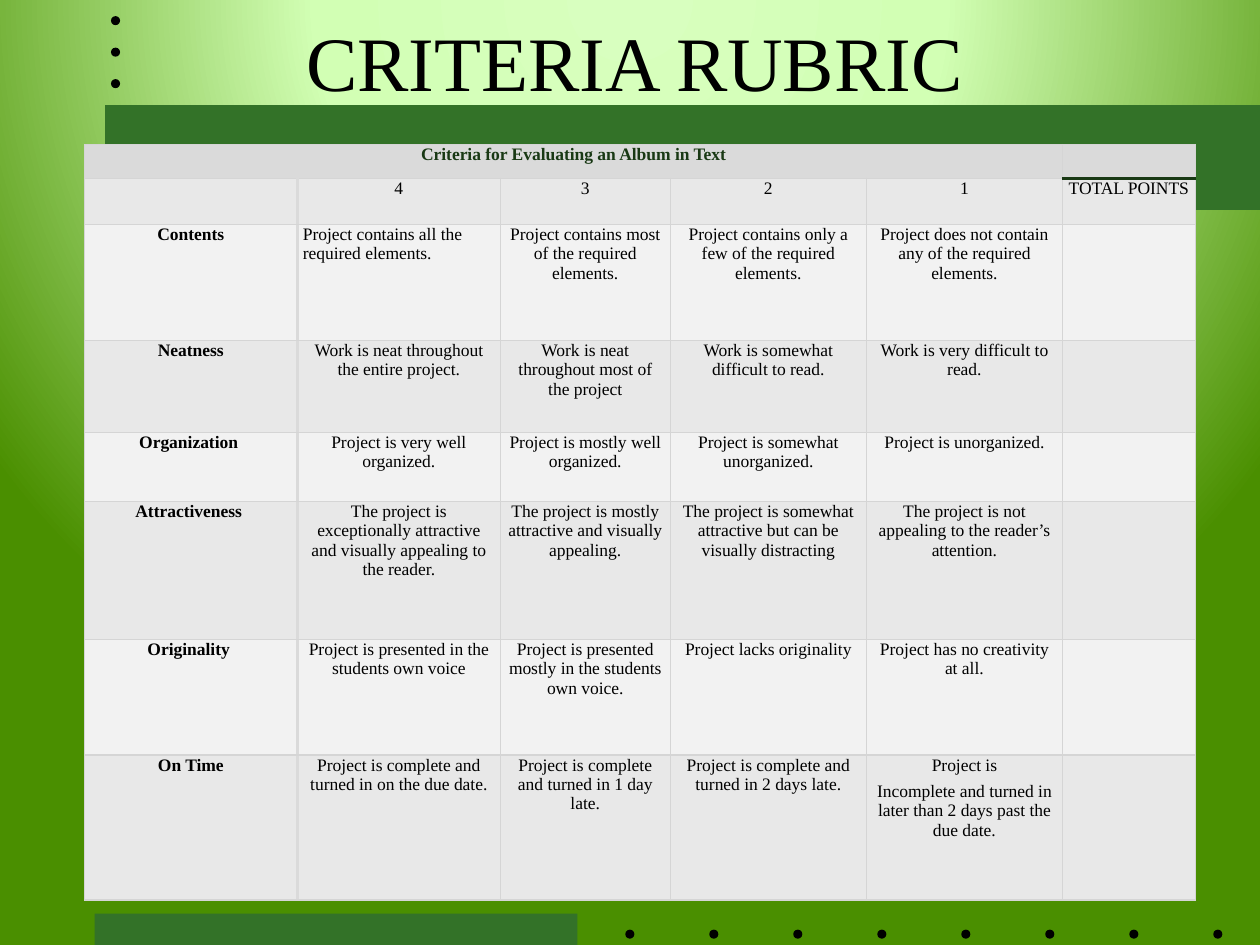
from lxml import etree
from pptx import Presentation
from pptx.dml.color import RGBColor
from pptx.enum.shapes import MSO_SHAPE
from pptx.enum.text import MSO_ANCHOR, MSO_AUTO_SIZE, PP_ALIGN
from pptx.oxml import parse_xml
from pptx.oxml.ns import nsdecls, qn
from pptx.util import Pt

RECT, DOT = MSO_SHAPE.RECTANGLE, MSO_SHAPE.OVAL
LEFT, MID = PP_ALIGN.LEFT, PP_ALIGN.CENTER
FONT = "Times New Roman"
COLORS = {
    "pale": "D8FFBF", "mint": "D2FFB4", "leaf": "4A8F00", "bar": "337228",
    "ink": "000000", "dark": "193914", "edge": "D5D5D5", "rule": "DADADA",
    "head": "DADADA", "odd": "E8E8E8", "even": "F2F2F2",
}
STOPS = [(0, "pale"), (40, "mint"), (100, "leaf")]
COLS = [121.7, 116, 97.1, 112.1, 112.1, 75.8]
ROWS = [19.5, 26.3, 66.2, 52.6, 39.5, 78.8, 66.2, 82.8]
CELLS = [
    ["Criteria for Evaluating an Album in Text", "", "", "", "", ""],
    ["", "4", "3", "2", "1", "TOTAL POINTS"],
    ["Contents",
     "Project contains all the required elements.",
     "Project contains most of the required elements.",
     "Project contains only a few of the required elements.",
     "Project does not contain any of the required elements.", ""],
    ["Neatness",
     "Work is neat throughout the entire project.",
     "Work is neat throughout most of the project",
     "Work is somewhat difficult to read.",
     "Work is very difficult to read.", ""],
    ["Organization ",
     "Project is very well organized.",
     "Project is mostly well organized.",
     "Project is somewhat unorganized.",
     "Project is unorganized.", ""],
    ["Attractiveness ",
     "The project is exceptionally attractive and visually appealing to the reader.",
     "The project is mostly attractive and visually appealing.",
     "The project is somewhat attractive but can be visually distracting",
     "The project is not appealing to the reader’s attention.", ""],
    ["Originality ",
     "Project is presented in the students own voice",
     "Project is presented mostly in the students own voice.",
     "Project lacks originality",
     "Project has no creativity at all.", ""],
    ["On Time",
     "Project is complete and turned in on the due date.",
     "Project is complete and turned in 1 day late.",
     "Project is complete and turned in 2 days late.",
     "Project is\nIncomplete and turned in later than 2 days past the due date.", ""],
]


def color(name):
    return RGBColor.from_string(COLORS[name])


def set_back(slide):
    slide.background.fill.gradient()
    old = slide.element.find(".//" + qn("a:gradFill"))
    stops = "".join(
        f'<a:gs pos="{pos * 1000}"><a:srgbClr val="{COLORS[name]}"/></a:gs>'
        for pos, name in STOPS)
    new = parse_xml(
        f'<a:gradFill {nsdecls("a")} rotWithShape="1"><a:gsLst>{stops}</a:gsLst>'
        '<a:path path="circle"><a:fillToRect l="50000" t="-80000" r="50000" '
        'b="180000"/></a:path></a:gradFill>')
    old.getparent().replace(old, new)


def add_shape(slide, kind, name, x, y, w, h):
    shape = slide.shapes.add_shape(kind, Pt(x), Pt(y), Pt(w), Pt(h))
    shape.shadow.inherit = False
    shape.fill.solid()
    shape.fill.fore_color.rgb = color(name)
    shape.line.fill.background()


def style(para, size, name="ink", bold=False, align=MID):
    para.alignment = align
    for run in para.runs:
        font = run.font
        font.name, font.size, font.bold = FONT, Pt(size), bold
        font.color.rgb = color(name)


def set_title(slide):
    title = slide.shapes.title
    title.left, title.top = Pt(93.6), Pt(15.1)
    title.width, title.height = Pt(538.6), Pt(39.6)
    frame = title.text_frame
    frame.text = "CRITERIA RUBRIC"
    frame.word_wrap = True
    frame.auto_size = MSO_AUTO_SIZE.NONE
    frame.vertical_anchor = MSO_ANCHOR.MIDDLE
    style(frame.paragraphs[0], 44)


def set_edge(cell, side, name="edge", width=0.75):
    line = etree.SubElement(
        cell._tc.get_or_add_tcPr(), qn(f"a:ln{side}"), w=str(Pt(width)))
    fill = etree.SubElement(line, qn("a:solidFill"))
    etree.SubElement(fill, qn("a:srgbClr"), val=COLORS[name])


def set_cell(cell, row, col, text):
    special = {}
    if row and col < 2:
        special["R" if col == 0 else "L"] = ("rule", 2)
    if row < 2 and col == len(COLS) - 1:
        special["B" if row == 0 else "T"] = ("dark", 2)
    for side in "LRTB":
        set_edge(cell, side, *special.get(side, ()))
    cell.fill.solid()
    cell.fill.fore_color.rgb = color(
        "head" if row == 0 else "odd" if row % 2 else "even")
    cell.margin_left = cell.margin_right = Pt(3.2)
    cell.margin_top, cell.margin_bottom = Pt(0.4), 0
    cell.text_frame.text = text
    for para in cell.text_frame.paragraphs:
        para.space_after = Pt(4)
        style(para, 10, "ink" if row else "dark", col == 0,
              LEFT if (row, col) == (2, 1) else MID)
        if not text:
            etree.SubElement(para._p, qn("a:endParaRPr"), sz="1000")


def add_grid(slide):
    table = slide.shapes.add_table(
        len(ROWS), len(COLS), Pt(48.2), Pt(82.5),
        Pt(sum(COLS)), Pt(sum(ROWS))).table
    table.first_row = table.horz_banding = False
    for col, width in zip(table.columns, COLS):
        col.width = Pt(width)
    for row, height in zip(table.rows, ROWS):
        row.height = Pt(height)
    for r, texts in enumerate(CELLS):
        for c, text in enumerate(texts):
            set_cell(table.cell(r, c), r, c, text)
    table.cell(0, 0).merge(table.cell(0, 4))


def main():
    deck = Presentation()
    deck.slide_width, deck.slide_height = Pt(720), Pt(540)
    slide = deck.slides.add_slide(deck.slide_layouts[5])
    set_back(slide)
    add_shape(slide, RECT, "bar", 54, 522, 276, 18)
    for i in range(8):
        add_shape(slide, DOT, "ink", 357.3 + 48 * i, 531.2, 5.2, 5.2)
    add_shape(slide, RECT, "bar", 60, 60, 660, 60)
    for i in range(3):
        add_shape(slide, DOT, "ink", 63.4, 9.2 + 18 * i, 5.2, 5.2)
    set_title(slide)
    add_grid(slide)
    deck.save("out.pptx")


if __name__ == "__main__":
    main()
